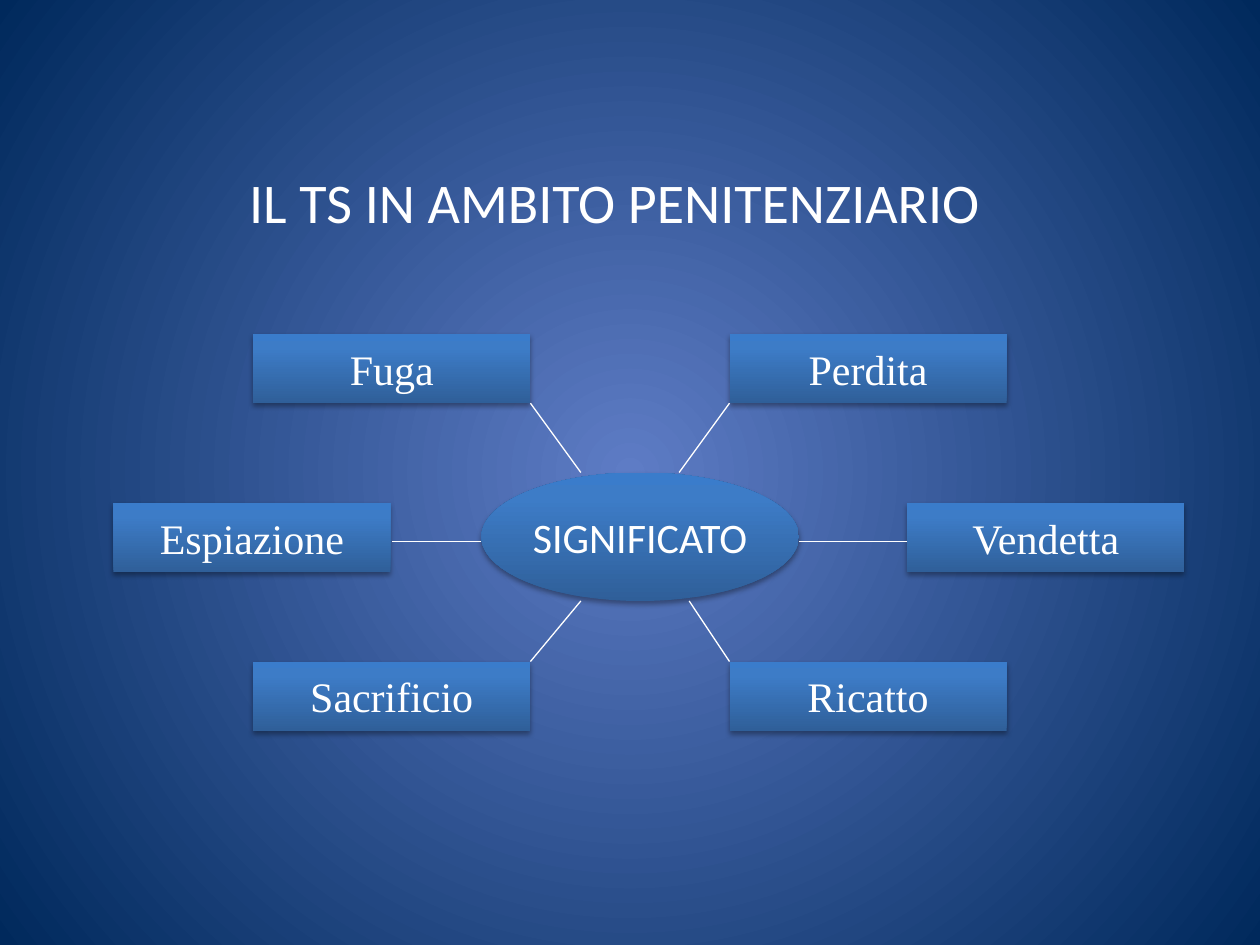
from lxml import etree
from pptx import Presentation
from pptx.dml.color import RGBColor
from pptx.enum.shapes import MSO_CONNECTOR, MSO_SHAPE
from pptx.enum.text import MSO_ANCHOR, PP_ALIGN
from pptx.oxml.ns import qn
from pptx.util import Inches, Pt

RECTANGLE, OVAL = MSO_SHAPE.RECTANGLE, MSO_SHAPE.OVAL
STRAIGHT = MSO_CONNECTOR.STRAIGHT
CENTER, MIDDLE = PP_ALIGN.CENTER, MSO_ANCHOR.MIDDLE

COLORS = {
    "text": "FFFFFF",
    "glow": "5E7CC5",
    "edge": "00295C",
    "dark": "2F5F99",
    "mid": "3D7CC7",
    "light": "3A7CCB",
    "shadow": "000000",
}
SANS, SERIF = "Calibri", "Times New Roman"
BOX_W, BOX_H = 2.2, 0.55

# Meanings around the centre: label, left, top
MEANINGS = [
    ("Fuga", 2.01, 2.65),
    ("Sacrificio", 2.01, 5.25),
    ("Espiazione", 0.9, 3.99),
    ("Ricatto", 5.79, 5.25),
    ("Vendetta", 7.2, 3.99),
    ("Perdita", 5.79, 2.65),
]
# Spokes from a meaning to the centre: x1, y1, x2, y2
SPOKES = [
    (5.79, 3.2, 5.39, 3.75),
    (4.21, 3.2, 4.61, 3.75),
    (3.11, 4.3, 3.82, 4.3),
    (4.21, 5.25, 4.61, 4.77),
    (7.2, 4.3, 6.34, 4.3),
    (5.79, 5.25, 5.47, 4.77),
]


def add_color(parent, name):
    return etree.SubElement(parent, qn("a:srgbClr"), val=COLORS[name])


def set_gradient(fill, owner, stops):
    """Give owner a gradient and return it, ready for its direction."""
    fill.solid()
    solid = owner.xpath(".//a:solidFill")[0]
    gradient = etree.Element(qn("a:gradFill"), rotWithShape="1")
    stop_list = etree.SubElement(gradient, qn("a:gsLst"))
    for position, name in stops:
        stop = etree.SubElement(stop_list, qn("a:gs"), pos=str(position * 1000))
        add_color(stop, name)
    solid.getparent().replace(solid, gradient)
    return gradient


def paint_background(slide):
    gradient = set_gradient(slide.background.fill, slide.element,
                            [(0, "glow"), (100, "edge")])
    circle = etree.SubElement(gradient, qn("a:path"), {"path": "circle"})
    etree.SubElement(circle, qn("a:fillToRect"),
                     l="50000", t="50000", r="50000", b="50000")


def write(frame, text, size, font):
    paragraph = frame.paragraphs[0]
    paragraph.alignment = CENTER
    run = paragraph.add_run()
    run.text = text
    run.font.size = Pt(size)
    run.font.name = font
    run.font.color.rgb = RGBColor.from_string(COLORS["text"])


def add_title(slide, text):
    title = slide.shapes.add_textbox(Inches(0.38), Inches(1.28),
                                     Inches(9), Inches(4.95))
    title.text_frame.word_wrap = True
    write(title.text_frame, text, 32, SANS)


def add_shadow(shape):
    shape.shadow.inherit = False
    effects = shape.element.spPr.find(qn("a:effectLst"))
    shadow = etree.SubElement(effects, qn("a:outerShdw"),
                              blurRad=str(Pt(3.1)), dist=str(Pt(1.8)),
                              dir="5400000", rotWithShape="0")
    etree.SubElement(add_color(shadow, "shadow"), qn("a:alpha"), val="35000")


def add_node(slide, kind, text, font, left, top, width, height):
    node = slide.shapes.add_shape(kind, Inches(left), Inches(top),
                                  Inches(width), Inches(height))
    gradient = set_gradient(node.fill, node.element.spPr,
                            [(0, "dark"), (80, "mid"), (100, "light")])
    etree.SubElement(gradient, qn("a:lin"), ang="16200000", scaled="0")
    node.line.fill.background()
    add_shadow(node)
    node.text_frame.word_wrap = False
    node.text_frame.vertical_anchor = MIDDLE
    write(node.text_frame, text, 24, font)


def add_spoke(slide, *ends):
    spoke = slide.shapes.add_connector(STRAIGHT, *map(Inches, ends))
    spoke.line.color.rgb = RGBColor.from_string(COLORS["text"])
    spoke.line.width = Pt(0.75)
    etree.SubElement(spoke.element.spPr, qn("a:effectLst"))


def main():
    prs = Presentation()
    prs.slide_width, prs.slide_height = Inches(10), Inches(7.5)
    slide = prs.slides.add_slide(prs.slide_layouts[6])
    paint_background(slide)
    add_title(slide, "IL TS IN AMBITO PENITENZIARIO")

    # Centre and the meanings around it
    add_node(slide, OVAL, "SIGNIFICATO", SANS, 3.82, 3.75, 2.52, 1.02)
    for label, left, top in MEANINGS:
        add_node(slide, RECTANGLE, label, SERIF, left, top, BOX_W, BOX_H)

    # Spokes
    for ends in SPOKES:
        add_spoke(slide, *ends)

    prs.save("out.pptx")


if __name__ == "__main__":
    main()
